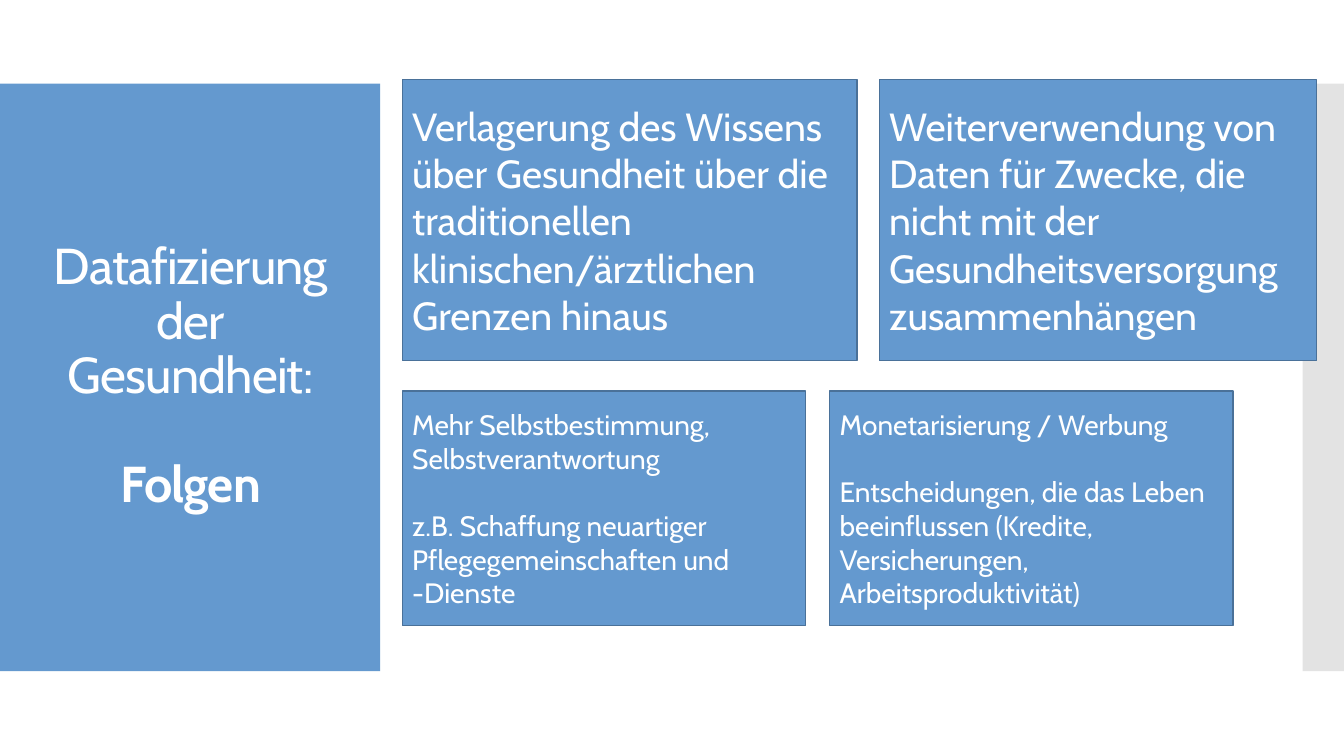
import dataclasses

import pptx
import pptx.dml.color
import pptx.enum.shapes
import pptx.enum.text
import pptx.oxml
import pptx.oxml.ns
import pptx.util

PX = 9144  # 100 px to the inch
ALIGN = pptx.enum.text.PP_ALIGN
ANCHOR = pptx.enum.text.MSO_ANCHOR


@dataclasses.dataclass(frozen=True)
class Theme:
    font: str = "Cabin"
    blue: str = "6499CF"
    outline: str = "4A7199"
    grey: str = "C8C8C8"
    white: str = "FFFFFF"
    title_size: int = 36
    large_size: int = 28
    small_size: int = 20
    outline_width: float = 0.85


def color(value):
    return pptx.dml.color.RGBColor.from_string(value)


def apply(target, values):
    for name, value in values.items():
        setattr(target, name, value)


class SlideBuilder:
    def __init__(self, page, theme):
        self.page = page
        self.theme = theme

    def rectangle(self, area, fill, outline=None, alpha=None):
        shape = self.page.shapes.add_shape(
            pptx.enum.shapes.MSO_SHAPE.RECTANGLE, *(value * PX for value in area))
        shape.shadow.inherit = False
        shape.fill.solid()
        shape.fill.fore_color.rgb = color(fill)
        if alpha is not None:
            tint = shape.element.spPr.find(".//" + pptx.oxml.ns.qn("a:srgbClr"))
            tint.append(pptx.oxml.parse_xml(
                f'<a:alpha {pptx.oxml.ns.nsdecls("a")} val="{alpha * 1000}"/>'))
        if outline:
            shape.line.color.rgb = color(outline)
            shape.line.width = pptx.util.Pt(self.theme.outline_width)
        else:
            shape.line.fill.background()
        return shape

    def set_text(self, box, paragraphs, size, gap, paragraph_format):
        frame = box.text_frame
        apply(frame, {"word_wrap": True, "vertical_anchor": ANCHOR.MIDDLE,
                      "auto_size": pptx.enum.text.MSO_AUTO_SIZE.NONE})
        for index, text in enumerate(paragraphs):
            para = frame.add_paragraph() if index else frame.paragraphs[0]
            apply(para, paragraph_format)
            para.space_before = pptx.util.Pt(gap if index else 0)
            span = para.add_run()
            span.text = text
            apply(span.font, {"name": self.theme.font, "size": pptx.util.Pt(size)})
            span.font.color.rgb = color(self.theme.white)

    def title(self, area, paragraphs):
        box = self.page.shapes.title
        apply(box, dict(zip(("left", "top", "width", "height"),
                            (value * PX for value in area))))
        self.set_text(box, paragraphs, self.theme.title_size, 39,
                      {"alignment": ALIGN.CENTER, "line_spacing": 0.9})
        box.text_frame.paragraphs[-1].runs[0].font.bold = True
        # Slightly tighter letter spacing
        for properties in box.element.iter(pptx.oxml.ns.qn("a:rPr")):
            properties.set("spc", "-60")

    def card(self, area, paragraphs, size):
        box = self.rectangle(area, self.theme.blue, self.theme.outline)
        self.set_text(box, paragraphs, size, 24, {"alignment": ALIGN.LEFT})


def main():
    deck = pptx.Presentation()
    apply(deck, {"slide_width": 1333 * PX, "slide_height": 750 * PX})
    theme = Theme()
    page = deck.slides.add_slide(deck.slide_layouts[5])
    builder = SlideBuilder(page, theme)

    # Side panels, placed behind the title
    for panel in (builder.rectangle((0, 83, 377, 583), theme.blue),
                  builder.rectangle((1292, 83, 41, 583), theme.grey, alpha=50)):
        page.shapes.title.element.addprevious(panel.element)

    builder.title((28, 123, 322, 503), ["Datafizierung der Gesundheit:", "Folgen"])

    # Main consequences above, examples below
    rows = (
        (79, 279, theme.large_size, (
            (399, 451, ["Verlagerung des Wissens über Gesundheit über die "
                        "traditionellen klinischen/ärztlichen Grenzen hinaus"]),
            (872, 434, ["Weiterverwendung von Daten für Zwecke, die nicht mit der "
                        "Gesundheitsversorgung zusammenhängen"]))),
        (388, 233, theme.small_size, (
            (399, 400, ["Mehr Selbstbestimmung, Selbstverantwortung",
                        "z.B. Schaffung neuartiger Pflegegemeinschaften und -Dienste"]),
            (823, 400, ["Monetarisierung / Werbung",
                        "Entscheidungen, die das Leben beeinflussen (Kredite, "
                        "Versicherungen, Arbeitsproduktivität)"]))),
    )
    for top, height, size, cards in rows:
        for left, width, paragraphs in cards:
            builder.card((left, top, width, height), paragraphs, size)

    deck.save("out.pptx")


if __name__ == "__main__":
    main()
